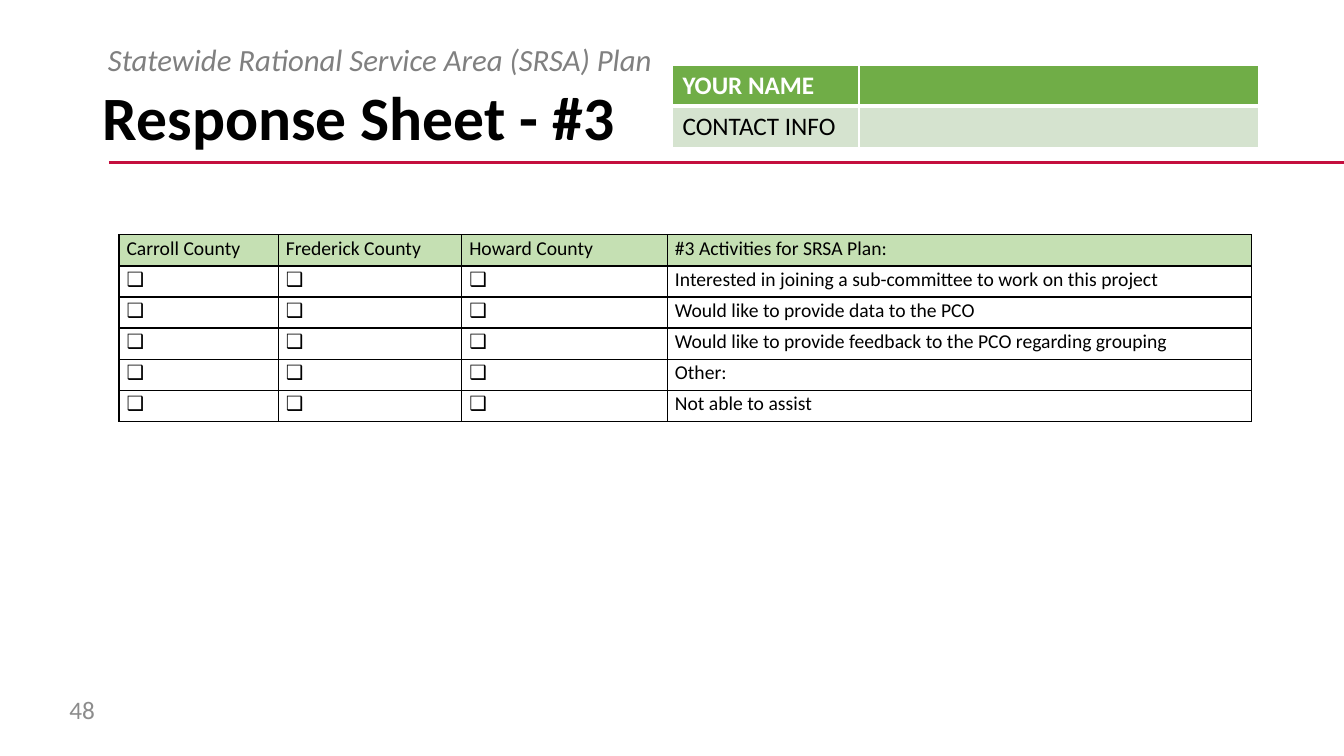
import pptx
import pptx.util
import pptx.dml.color
import pptx.enum.shapes
import pptx.enum.text
import pptx.oxml.ns
import lxml.etree

Inches, Pt = pptx.util.Inches, pptx.util.Pt
RGBColor = pptx.dml.color.RGBColor
ANCHOR = pptx.enum.text.MSO_ANCHOR
qn = pptx.oxml.ns.qn

# Content
TITLE = "Response Sheet - #3"
SUBTITLE = "Statewide Rational Service Area (SRSA) Plan"
PAGE_NUMBER = "48"
CONTACT_ROWS = [("YOUR NAME", ""), ("CONTACT INFO", "")]
COUNTIES = ["Carroll County", "Frederick County", "Howard County"]
ACTIVITIES_HEADING = "#3 Activities for SRSA Plan:"
ACTIVITIES = [
    "Interested in joining a sub-committee to work on this project",
    "Would like to provide data to the PCO",
    "Would like to provide feedback to the PCO regarding grouping",
    "Other:",
    "Not able to assist",
]
CHECKBOX = "❑"

# Format
FONT = "Calibri"
BLACK = RGBColor(0x00, 0x00, 0x00)
WHITE = RGBColor(0xFF, 0xFF, 0xFF)
GRAY = RGBColor(0x80, 0x80, 0x80)
PAGE_GRAY = RGBColor(0x8C, 0x8C, 0x8C)
RED = RGBColor(0xC4, 0x0E, 0x3E)
GREEN = RGBColor(0x70, 0xAD, 0x47)
PALE_GREEN = RGBColor(0xD5, 0xE3, 0xCF)
LIGHT_GREEN = RGBColor(0xC5, 0xE0, 0xB3)
SIDES = ("lnL", "lnR", "lnT", "lnB")


def format_text(frame, text, size, color, spacing=1.0, **font_values):
    paragraph = frame.paragraphs[0]
    paragraph.text = text
    paragraph.alignment = pptx.enum.text.PP_ALIGN.LEFT
    paragraph.line_spacing = spacing
    paragraph.space_before = Pt(0)
    values = {"name": FONT, "size": Pt(size), "bold": False, **font_values}
    fonts = [run.font for run in paragraph.runs] or [paragraph.font]
    for font in fonts:
        for name, value in values.items():
            setattr(font, name, value)
        font.color.rgb = color


def set_bullet(frame, hanging, character=None):
    properties = frame.paragraphs[0]._p.get_or_add_pPr()
    properties.set("marL", str(Inches(hanging)))
    properties.set("indent", str(Inches(-hanging)))
    if character:
        lxml.etree.SubElement(properties, qn("a:buFont"), typeface=FONT)
        lxml.etree.SubElement(properties, qn("a:buChar"), char=character)
    else:
        lxml.etree.SubElement(properties, qn("a:buNone"))


def place(shape, left, top, width, height):
    box = {"left": left, "top": top, "width": width, "height": height}
    for name, value in box.items():
        setattr(shape, name, Inches(value))


def set_borders(cell, color, widths):
    properties = cell._tc.get_or_add_tcPr()
    for position, (side, width) in enumerate(zip(SIDES, widths)):
        line = lxml.etree.Element(qn(f"a:{side}"), w=str(Pt(width)))
        fill = lxml.etree.SubElement(line, qn("a:solidFill"))
        lxml.etree.SubElement(fill, qn("a:srgbClr"), val=str(color))
        properties.insert(position, line)


def add_grid(slide, left, top, column_widths, height, row_count):
    table = slide.shapes.add_table(
        row_count, len(column_widths), Inches(left), Inches(top),
        Inches(sum(column_widths)), Inches(height)).table
    table.horz_banding = False
    table.first_row = False
    for column, width in zip(table.columns, column_widths):
        column.width = Inches(width)
    return table


def add_headings(slide):
    title = slide.shapes.title
    subtitle = slide.placeholders[1]
    place(title, 0.92, 0.65, 11.5, 1.09)
    place(subtitle, 0.97, 0.4, 11.45, 0.38)
    for shape, anchor in ((title, ANCHOR.MIDDLE), (subtitle, ANCHOR.TOP)):
        shape.text_frame.auto_size = pptx.enum.text.MSO_AUTO_SIZE.NONE
        shape.text_frame.vertical_anchor = anchor
    set_bullet(subtitle.text_frame, 0)
    format_text(title.text_frame, TITLE, 44, BLACK, 0.9, bold=True)
    format_text(subtitle.text_frame, SUBTITLE, 22, GRAY, 0.9, italic=True)


def add_rule(slide):
    rule = slide.shapes.add_connector(
        pptx.enum.shapes.MSO_CONNECTOR.STRAIGHT,
        Inches(1.08), Inches(1.61), Inches(13.33), Inches(1.61))
    rule.line.color.rgb = RED
    rule.line.width = Pt(2.25)
    lxml.etree.SubElement(rule._element.spPr, qn("a:effectLst"))


def add_page_number(slide):
    box = slide.shapes.add_textbox(
        Inches(0.59), Inches(6.84), Inches(0.59), Inches(0.4))
    box.text_frame.word_wrap = True
    box.text_frame.vertical_anchor = ANCHOR.MIDDLE
    format_text(box.text_frame, PAGE_NUMBER, 18, PAGE_GRAY)


def add_contact_table(slide):
    table = add_grid(slide, 6.67, 0.65, [1.85, 3.96], 0.81, len(CONTACT_ROWS))
    styles = [(GREEN, WHITE, True, (1, 1, 1, 3)),
              (PALE_GREEN, BLACK, False, (1, 1, 1, 1))]
    for row, texts, style in zip(table.rows, CONTACT_ROWS, styles):
        fill, color, bold, widths = style
        for cell, text in zip(row.cells, texts):
            cell.fill.solid()
            cell.fill.fore_color.rgb = fill
            set_borders(cell, WHITE, widths)
            format_text(cell.text_frame, text, 18, color, bold=bold)


def add_response_table(slide):
    # A checkbox cell is a bullet in front of a single space
    rows = [COUNTIES + [ACTIVITIES_HEADING]]
    rows += [[" "] * len(COUNTIES) + [activity] for activity in ACTIVITIES]
    table = add_grid(slide, 1.18, 2.33, [1.58, 1.82, 2.04, 5.79], 1.85, len(rows))
    margins = {"margin_left": Pt(5.4), "margin_right": Pt(5.4),
               "margin_top": 0, "margin_bottom": 0}
    for index, (row, texts) in enumerate(zip(table.rows, rows)):
        for cell, text in zip(row.cells, texts):
            for name, value in margins.items():
                setattr(cell, name, value)
            if index == 0:
                cell.fill.solid()
                cell.fill.fore_color.rgb = LIGHT_GREEN
            else:
                cell.fill.background()
            set_borders(cell, BLACK, (1, 1, 1, 1))
            if text == " ":
                set_bullet(cell.text_frame, 0.25, CHECKBOX)
            format_text(cell.text_frame, text, 14, BLACK, 1.07)


def main():
    presentation = pptx.Presentation()
    presentation.slide_width = Inches(13.33)
    presentation.slide_height = Inches(7.5)
    slide = presentation.slides.add_slide(presentation.slide_layouts[1])
    add_rule(slide)
    add_headings(slide)
    add_page_number(slide)
    add_contact_table(slide)
    add_response_table(slide)
    presentation.save("out.pptx")


if __name__ == "__main__":
    main()
